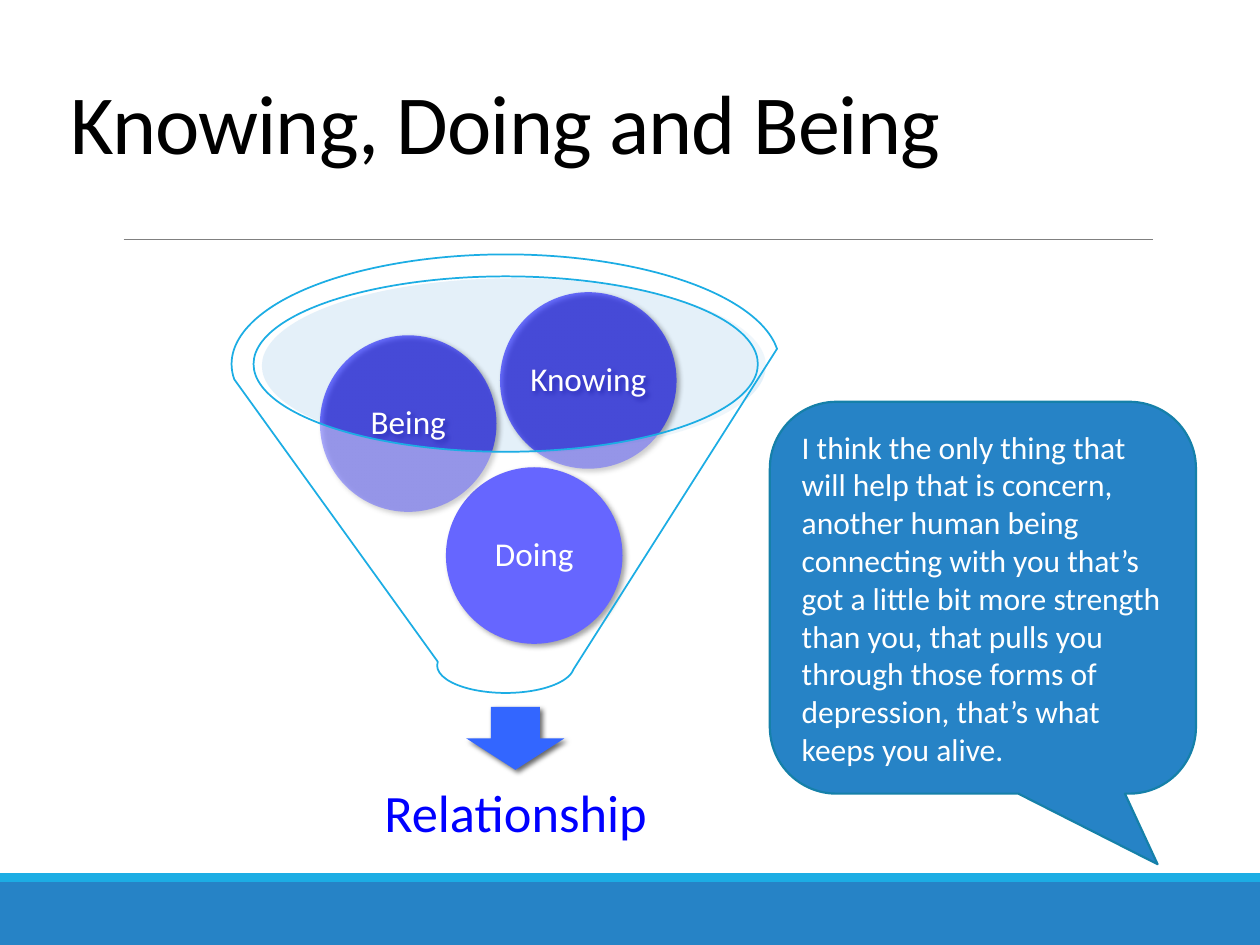
from collections import namedtuple

from lxml.etree import SubElement
from pptx import Presentation
from pptx.dml.color import RGBColor
from pptx.enum.shapes import MSO_CONNECTOR, MSO_SHAPE
from pptx.enum.text import MSO_ANCHOR as Anchor, MSO_AUTO_SIZE, PP_ALIGN as Align
from pptx.oxml.ns import qn
from pptx.util import Cm, Pt

Box = namedtuple("Box", "left top width height")

FONT = "Calibri"
BLUE, SKY, WHITE = "2683C6", "1CADE4", "FFFFFF"
BALL_SIZE = 3.56
QUOTE = (
    "I think the only thing that will help that is concern, another human being "
    "connecting with you that’s got a little bit more strength than you, that pulls "
    "you through those forms of depression, that’s what keeps you alive."
)


def color(value):
    return RGBColor.from_string(value)


def lengths(box):
    return [Cm(value) for value in box]


def inside(box, left, top, width, height):
    """Move a box given relative to another one onto the slide."""
    return Box(box.left + left, box.top + top, width, height)


def add_filled(slide, kind, box, fill, opacity=100, line=None, line_width=1):
    shape = slide.shapes.add_shape(kind, *lengths(box))
    shape.shadow.inherit = False
    shape.fill.solid()
    shape.fill.fore_color.rgb = color(fill)
    if opacity < 100:
        fill_color = shape.fill._xPr.find(qn("a:solidFill"))[0]
        SubElement(fill_color, qn("a:alpha"), val=str(opacity * 1000))
    if line:
        shape.line.color.rgb = color(line)
        shape.line.width = Pt(line_width)
    else:
        shape.line.fill.background()
    return shape


def add_shadow(shape):
    effects = shape._element.spPr.find(qn("a:effectLst"))
    shadow = SubElement(
        effects, qn("a:outerShdw"), blurRad=str(Pt(3)), dist=str(Pt(2)),
        dir=str(45 * 60000), algn="ctr", rotWithShape="0",
    )
    black = SubElement(shadow, qn("a:srgbClr"), val="000000")
    SubElement(black, qn("a:alpha"), val="60000")


def write(shape, text, size, text_color, align=Align.LEFT, anchor=Anchor.MIDDLE,
          spacing=1.0, inset=None):
    frame = shape.text_frame
    frame.text = text
    frame.word_wrap = True
    frame.auto_size = MSO_AUTO_SIZE.NONE
    frame.vertical_anchor = anchor
    if inset is not None:
        frame.margin_left = frame.margin_right = Cm(inset)
        frame.margin_top = frame.margin_bottom = Cm(inset)
    paragraph = frame.paragraphs[0]
    paragraph.alignment = align
    paragraph.line_spacing = spacing
    font = paragraph.runs[0].font
    font.name, font.size = FONT, Pt(size)
    font.color.rgb = color(text_color)
    return paragraph.runs[0]


def add_footer(slide, box):
    strip = 0.18
    add_filled(slide, MSO_SHAPE.RECTANGLE,
               inside(box, 0, strip, box.width, box.height - strip), BLUE)
    add_filled(slide, MSO_SHAPE.RECTANGLE, inside(box, 0, 0, box.width, strip), SKY)


def add_title(slide, box):
    title = slide.shapes.title
    title.left, title.top, title.width, title.height = lengths(box)
    run = write(title, "Knowing, Doing and Being", 48, "000000",
                anchor=Anchor.BOTTOM, spacing=0.85)
    run.font._element.set("spc", "-50")
    rule_top = Cm(box.top + 3.79)
    rule = slide.shapes.add_connector(
        MSO_CONNECTOR.STRAIGHT, Cm(box.left + 1.32), rule_top,
        Cm(box.left + 22.07), rule_top)
    rule.line.color.rgb = color("808080")
    rule.line.width = Pt(0.5)
    SubElement(rule._element.spPr, qn("a:effectLst"))


def add_ball(slide, box, text, opacity):
    ball = add_filled(slide, MSO_SHAPE.OVAL, box, "0000FF", opacity)
    add_shadow(ball)
    write(ball, text, 19, WHITE, Align.CENTER, spacing=0.9, inset=0.07)


def add_funnel(slide, box):
    """Funnel with three balls, the arrow out of it and the result below."""
    add_filled(slide, MSO_SHAPE.OVAL, inside(box, 0.61, 0.48, 10.16, 3.53), "BDDBF2", 40)
    arrow = add_filled(slide, MSO_SHAPE.DOWN_ARROW,
                       inside(box, 4.73, 9.12, 1.98, 1.27), "3366FF")
    add_shadow(arrow)
    result = slide.shapes.add_textbox(*lengths(inside(box, 0.99, 10.14, 9.47, 2.36)))
    write(result, "Relationship", 30, "0000FF", Align.CENTER, spacing=0.9, inset=0.58)
    balls = [
        ("Doing", 4.32, 4.29, 100),
        ("Being", 1.78, 1.63, 54),
        ("Knowing", 5.41, 0.76, 54),
    ]
    for text, left, top, opacity in balls:
        add_ball(slide, inside(box, left, top, BALL_SIZE, BALL_SIZE), text, opacity)
    add_filled(slide, MSO_SHAPE.FUNNEL, inside(box, 0, 0, box.width, 8.84),
               WHITE, 40, line=SKY)


def add_quote(slide, box):
    callout = add_filled(slide, MSO_SHAPE.ROUNDED_RECTANGULAR_CALLOUT, box, BLUE,
                         line="1580A9", line_width=1.25)
    for index, value in enumerate((0.41, 0.68, 0.17)):
        callout.adjustments[index] = value
    write(callout, QUOTE, 18, WHITE)


def main():
    presentation = Presentation()
    presentation.slide_width, presentation.slide_height = Cm(25.4), Cm(19.05)
    slide = presentation.slides.add_slide(presentation.slide_layouts[5])
    add_footer(slide, Box(0, 17.6, 25.4, 1.45))
    add_title(slide, Box(1.17, 1.04, 22.35, 2.54))
    add_funnel(slide, Box(4.67, 5.13, 11.05, 12.5))
    add_quote(slide, Box(15.52, 8.1, 8.59, 7.9))
    presentation.save("out.pptx")


if __name__ == "__main__":
    main()
